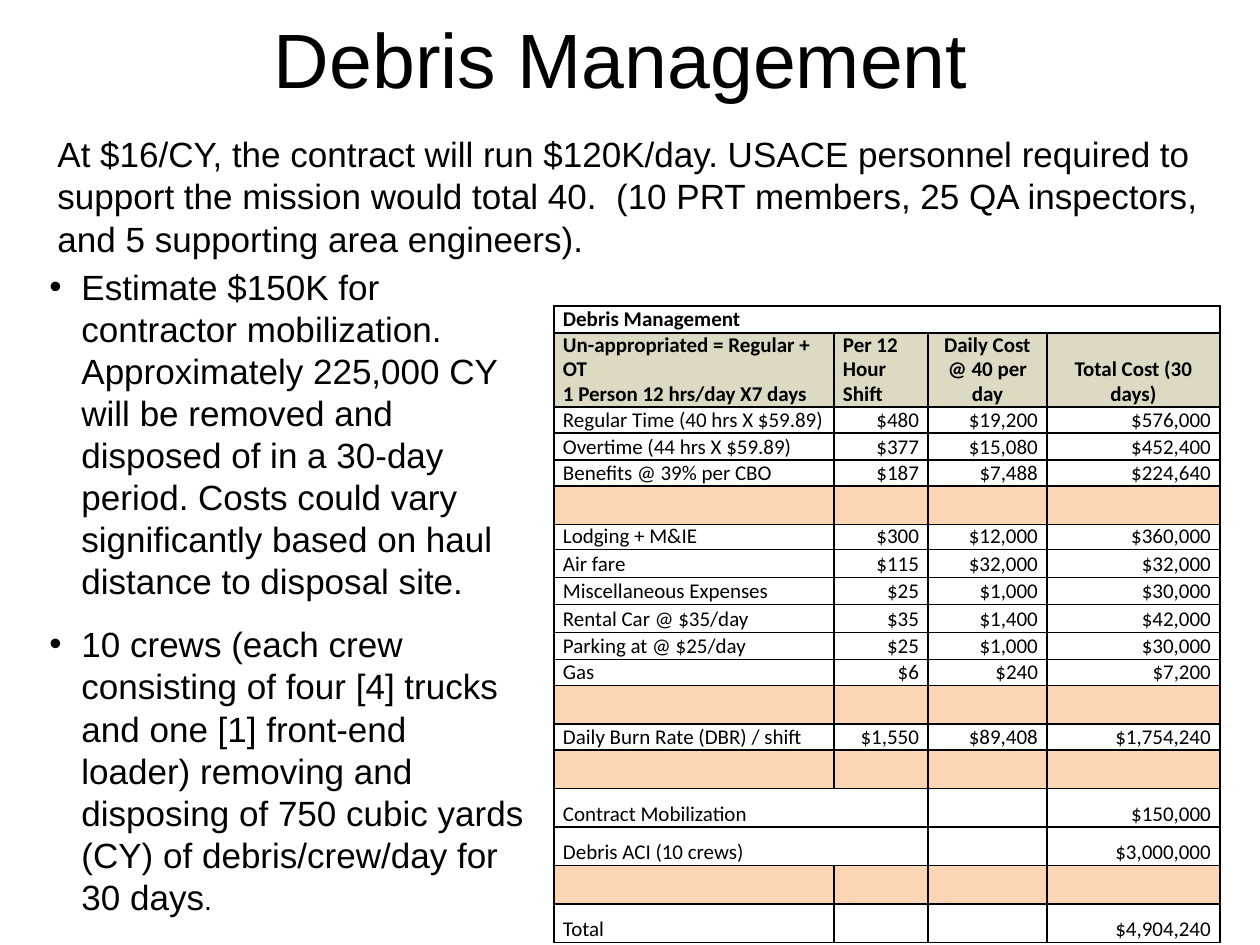
"""Build the Debris Management slide with its cost table."""
from lxml.etree import SubElement
from pptx import Presentation
from pptx.dml.color import RGBColor
from pptx.enum.text import MSO_ANCHOR, MSO_AUTO_SIZE, PP_ALIGN
from pptx.oxml.ns import qn
from pptx.util import Pt

TITLE = "Debris Management"
INTRO = ("At $16/CY, the contract will run $120K/day. USACE personnel required to support "
         "the mission would total 40.  (10 PRT members, 25 QA inspectors, and 5 supporting "
         "area engineers).")
BULLETS = [
    [("Estimate $150K for contractor mobilization. Approximately 225,000 CY will be removed "
      "and disposed of in a 30-day period. Costs could vary significantly based on haul "
      "distance to disposal site.", 20)],
    [("10 crews (each crew consisting of four [4] trucks and one [1] front-end loader) "
      "removing and disposing of 750 cubic yards (CY) of debris/crew/day for 30 days", 20),
     (".", 16)],
]
GAP = ("", "", "", "")
ROWS = [
    ("Debris Management", "", "", ""),
    ("Un-appropriated = Regular + OT\n1 Person 12 hrs/day X7 days", "Per 12 Hour Shift",
     "Daily Cost @ 40 per day", "Total Cost (30 days)"),
    ("Regular Time (40 hrs X $59.89)", "$480", "$19,200", "$576,000"),
    ("Overtime (44 hrs X $59.89)", "$377", "$15,080", "$452,400"),
    ("Benefits @ 39% per CBO", "$187", "$7,488", "$224,640"),
    GAP,
    ("Lodging + M&IE", "$300", "$12,000", "$360,000"),
    ("Air fare", "$115", "$32,000", "$32,000"),
    ("Miscellaneous Expenses", "$25", "$1,000", "$30,000"),
    ("Rental Car @ $35/day", "$35", "$1,400", "$42,000"),
    ("Parking at @ $25/day", "$25", "$1,000", "$30,000"),
    ("Gas", "$6", "$240", "$7,200"),
    GAP,
    ("Daily Burn Rate (DBR) / shift", "$1,550", "$89,408", "$1,754,240"),
    GAP,
    ("Contract Mobilization", "", "", "$150,000"),
    ("Debris ACI (10 crews)", "", "", "$3,000,000"),
    GAP,
    ("Total", "", "", "$4,904,240"),
]
COL_W = [280, 94, 119, 173]
ROW_H = [27, 74, 26, 27, 26, 27, 25, 28, 27, 28, 27, 26, 26, 26, 27, 26, 27, 26, 27]
MERGES = [((0, 0), (0, 3)), ((16, 0), (16, 1))]
OPEN_SIDES = {(15, 0): "R", (15, 1): "L"}
LEFT, CENTER, RIGHT = PP_ALIGN.LEFT, PP_ALIGN.CENTER, PP_ALIGN.RIGHT


def px(n):
    return round(n * 914400 / 126)


def rgb(color):
    return RGBColor.from_string(color)


def write(p, runs, font="Arial", bold=False, align=LEFT, line=None, after=None,
          margin=0, indent=0, bullet=None):
    pPr = p._p.get_or_add_pPr()
    pPr.set("marL", str(px(margin)))
    pPr.set("indent", str(px(indent)))
    if bullet:
        SubElement(pPr, qn("a:buFont"), typeface="Arial")
        SubElement(pPr, qn("a:buChar"), char=bullet)
    p.alignment = align
    if line:
        p.line_spacing = Pt(line)
    if after:
        p.space_after = Pt(after)
    for text, size in runs:
        for i, part in enumerate(text.split("\n")):
            if i:
                p.add_line_break()
            r = p.add_run()
            r.text = part
            r.font.name, r.font.size, r.font.bold = font, Pt(size), bold
            r.font.color.rgb = rgb("000000")


def add_box(s, box, paragraphs, grow=True, **style):
    tf = s.shapes.add_textbox(*map(px, box)).text_frame
    tf.word_wrap = True
    tf.auto_size = MSO_AUTO_SIZE.SHAPE_TO_FIT_TEXT if grow else MSO_AUTO_SIZE.NONE
    tf.vertical_anchor = MSO_ANCHOR.MIDDLE
    for i, runs in enumerate(paragraphs):
        write(tf.add_paragraph() if i else tf.paragraphs[0], runs, **style)


def set_borders(cell, open_sides):
    tcPr = cell._tc.get_or_add_tcPr()
    for side in "LRTB":
        ln = SubElement(tcPr, qn(f"a:ln{side}"), w=str(Pt(1)))
        if side in open_sides:
            SubElement(ln, qn("a:noFill"))
        else:
            fill = SubElement(ln, qn("a:solidFill"))
            SubElement(fill, qn("a:srgbClr"), val="000000")


def add_cost_table(s, left, top):
    frame = s.shapes.add_table(len(ROWS), len(COL_W), px(left), px(top),
                               px(sum(COL_W)), px(sum(ROW_H)))
    table = frame.table
    table.first_row = table.horz_banding = False
    for col, w in zip(table.columns, COL_W):
        col.width = px(w)
    for row, h in zip(table.rows, ROW_H):
        row.height = px(h)
    for i, values in enumerate(ROWS):
        fill = "FCD5B4" if values == GAP else "DDD9C3" if i == 1 else None
        for j, text in enumerate(values):
            cell = table.cell(i, j)
            cell.margin_left = cell.margin_right = px(9)
            cell.margin_top = cell.margin_bottom = 0
            cell.vertical_anchor = MSO_ANCHOR.BOTTOM if i else MSO_ANCHOR.MIDDLE
            set_borders(cell, OPEN_SIDES.get((i, j), ""))
            if fill:
                cell.fill.solid()
                cell.fill.fore_color.rgb = rgb(fill)
            else:
                cell.fill.background()
            if i == 1:
                align = CENTER if j > 1 else LEFT
            else:
                align = RIGHT if j else LEFT
            write(cell.text_frame.paragraphs[0], [(text, 12)] if text else [],
                  font="Calibri", bold=i < 2, align=align, line=14)
    for first, last in MERGES:
        table.cell(*first).merge(table.cell(*last))


def main():
    prs = Presentation()
    prs.slide_width, prs.slide_height = px(1260), px(945)
    s = prs.slides.add_slide(prs.slide_layouts[6])
    add_box(s, (54, 0, 1134, 115), [[(TITLE, 44)]], grow=False, align=CENTER)
    add_cost_table(s, 554, 306)
    add_box(s, (29, 126, 1205, 140), [[(INTRO, 20)]], margin=16)
    add_box(s, (29, 278, 509, 627), BULLETS, margin=40, indent=-32, after=12, bullet="•")
    prs.save("out.pptx")


if __name__ == "__main__":
    main()
